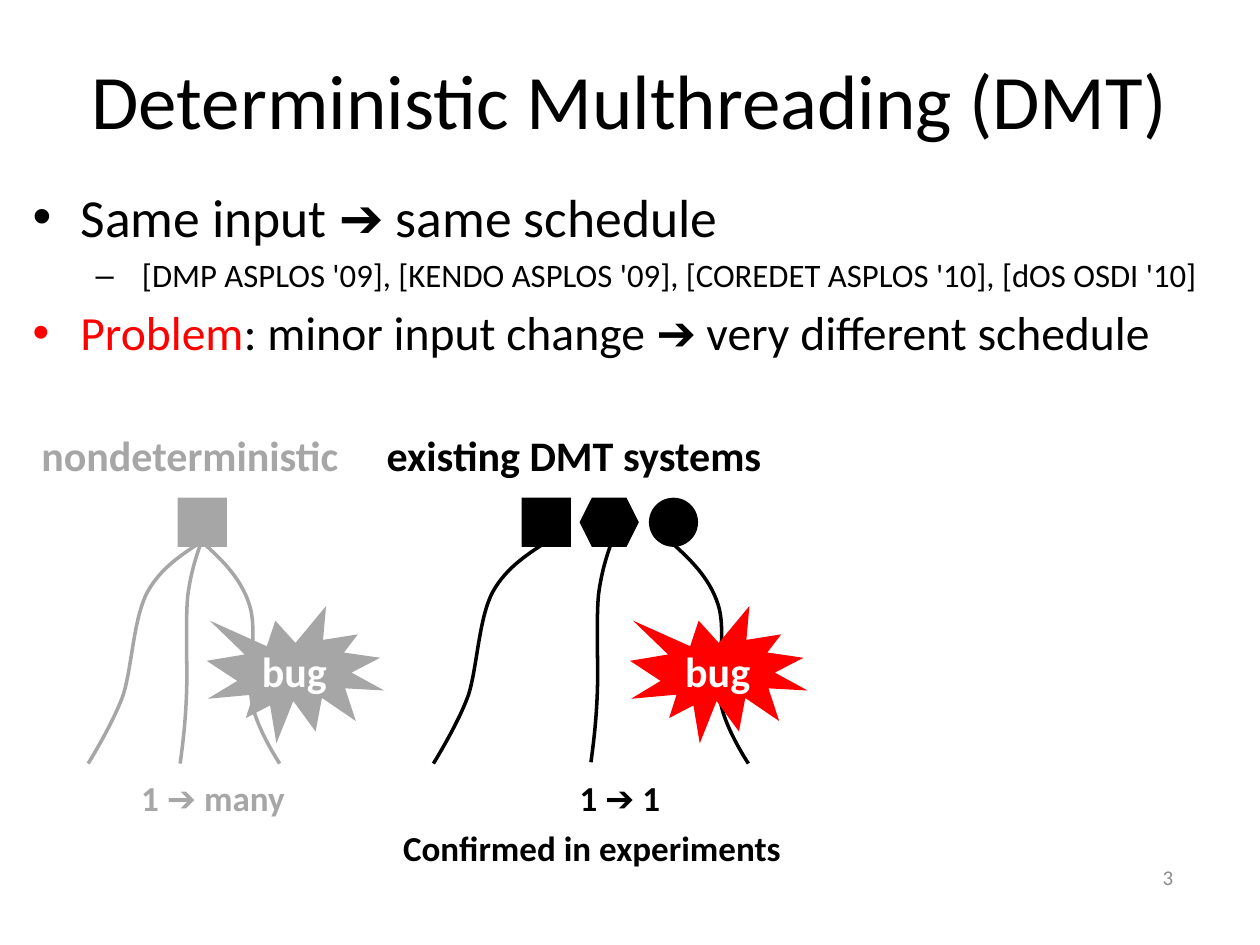
from pptx import Presentation
from pptx.dml.color import RGBColor
from pptx.enum.shapes import MSO_SHAPE
from pptx.enum.text import MSO_ANCHOR, PP_ALIGN
from pptx.oxml.ns import qn
from pptx.oxml.xmlchemy import OxmlElement
from pptx.util import Inches, Pt

RECT, HEXAGON, OVAL = MSO_SHAPE.RECTANGLE, MSO_SHAPE.HEXAGON, MSO_SHAPE.OVAL
BURST = MSO_SHAPE.EXPLOSION1
LEFT, CENTER, RIGHT = PP_ALIGN.LEFT, PP_ALIGN.CENTER, PP_ALIGN.RIGHT
TOP, MIDDLE = MSO_ANCHOR.TOP, MSO_ANCHOR.MIDDLE
COLORS = {"black": "000000", "red": "FF0000", "gray": "A6A6A6",
          "white": "FFFFFF", "number": "8C8C8C"}

deck = Presentation()
deck.slide_width, deck.slide_height = Inches(10), Inches(7.5)
page = deck.slides.add_slide(deck.slide_layouts[6])


def add_span(para, text, size, color, bold=False):
    span = para.add_run()
    span.text = text
    for name, value in {"name": "Calibri", "size": Pt(size), "bold": bold}.items():
        setattr(span.font, name, value)
    span.font.color.rgb = RGBColor.from_string(COLORS[color])


def add_box(shapes, bounds, text, size, color, align=LEFT, anchor=TOP, bold=True,
            wrap=True, shape=None, fill=None, outline=None):
    place = [Inches(value) for value in bounds]
    if shape is None:
        box = shapes.add_textbox(*place)
    else:
        box = shapes.add_shape(shape, *place)
        box.shadow.inherit = False
        if fill:
            box.fill.solid()
            box.fill.fore_color.rgb = RGBColor.from_string(COLORS[fill])
        else:
            box.fill.background()
        if outline:
            box.line.color.rgb = RGBColor.from_string(COLORS[outline])
            box.line.width = Pt(0.75)
        else:
            box.line.fill.background()
    frame = box.text_frame
    frame.word_wrap, frame.vertical_anchor = wrap, anchor
    if text:
        frame.paragraphs[0].alignment = align
        add_span(frame.paragraphs[0], text, size, color, bold)
    return box


add_box(page.shapes, (0.5, 0.16, 9, 1.25), "Deterministic Multhreading (DMT)", 44,
        "black", CENTER, MIDDLE, bold=False)

bullets = [
    ("•", 0.38, 0.38, 30.6, 6, [("Same input ➔ same schedule", "black")]),
    ("–", 0.81, 0.31, 18.7, 4,
     [(" [DMP ASPLOS '09], [KENDO ASPLOS '09], [COREDET ASPLOS '10], [dOS OSDI '10]",
       "black")]),
    ("•", 0.38, 0.38, 27.2, 5,
     [("Problem", "red"), (": minor input change ➔ very different schedule", "black")]),
]
body = add_box(page.shapes, (0.16, 1.41, 9.69, 2.03), "", 27.2, "black").text_frame
for index, (mark, margin, hanging, size, before, spans) in enumerate(bullets):
    para = body.add_paragraph() if index else body.paragraphs[0]
    para.space_before = Pt(before)
    properties = para._p.get_or_add_pPr()
    properties.set("marL", str(Inches(margin)))
    properties.set("indent", str(-Inches(hanging)))
    for tag, name, value in (("a:buFont", "typeface", "Arial"), ("a:buChar", "char", mark)):
        element = OxmlElement(tag)
        element.set(name, value)
        properties.append(element)
    for text, color in spans:
        add_span(para, text, size, color)

add_box(page.shapes, (7.08, 6.76, 2.33, 0.4), "3", 12, "number", RIGHT, MIDDLE, bold=False)

STRANDS = {
    "left": [(0, 0), (-0.17, 0.11), (-0.35, 0.22), (-0.46, 0.42),
             (-0.57, 0.63), (-0.58, 1), (-0.65, 1.23),
             (-0.73, 1.46), (-0.93, 1.78), (-0.93, 1.78)],
    "middle": [(0, 0), (-0.06, 0.16), (-0.12, 0.31), (-0.15, 0.54),
               (-0.17, 0.76), (-0.15, 1.12), (-0.16, 1.34),
               (-0.17, 1.57), (-0.19, 1.72), (-0.21, 1.87)],
    "right": [(0, 0), (0.17, 0.15), (0.33, 0.3), (0.4, 0.52),
              (0.47, 0.74), (0.38, 1.09), (0.42, 1.3),
              (0.46, 1.51), (0.64, 1.78), (0.64, 1.78)],
}
systems = [
    {"color": "black", "title": "existing DMT systems", "title_at": (2.97, 3.21),
     "inputs": [(RECT, 4.14, 0.39), (HEXAGON, 4.6, 0.47), (OVAL, 5.15, 0.39)],
     "strands": [("left", 4.37, 4.28), ("right", 5.3, 4.28), ("middle", 4.9, 4.18)],
     "bug": (5, "red"), "ratio": (4.06, "1 ➔ 1"), "shapes": page.shapes},
    {"color": "gray", "title": "nondeterministic", "title_at": (0.23, 2.58),
     "inputs": [(RECT, 1.41, 0.39)],
     "strands": [("left", 1.63, 4.28), ("right", 1.58, 4.28), ("middle", 1.64, 4.19)],
     "bug": (1.64, "gray"), "ratio": (0.83, "1 ➔ many"),
     "shapes": page.shapes.add_group_shape().shapes},
]
for system in systems:
    color, shapes = system["color"], system["shapes"]
    left, width = system["title_at"]
    add_box(shapes, (left, 3.36, width, 0.5), system["title"], 24, color, wrap=False)
    for shape, left, width in system["inputs"]:
        add_box(shapes, (left, 3.95, width, 0.39), "", 24, color, shape=shape, fill=color)
    for strand, start_x, start_y in system["strands"]:
        points = [(Inches(start_x + x), Inches(start_y + y)) for x, y in STRANDS[strand]]
        builder = shapes.build_freeform(*points[0])
        builder.add_line_segments(points[3::3], close=False)
        curve = builder.convert_to_shape()
        left, top = min(x for x, y in points[::3]), min(y for x, y in points[::3])
        segments = list(curve._element.iter(qn("a:lnTo")))
        for index, segment in enumerate(segments):
            bezier = OxmlElement("a:cubicBezTo")
            for x, y in points[3 * index + 1:3 * index + 4]:
                point = OxmlElement("a:pt")
                point.set("x", str(x - left))
                point.set("y", str(y - top))
                bezier.append(point)
            segment.getparent().replace(segment, bezier)
        curve.shadow.inherit = False
        curve.fill.background()
        curve.line.color.rgb = RGBColor.from_string(COLORS[color])
        curve.line.width = Pt(2)
    left, fill = system["bug"]
    add_box(shapes, (left, 4.81, 1.41, 1.09), "bug", 24, "white", CENTER, MIDDLE,
            wrap=False, shape=BURST, fill=fill)
    left, text = system["ratio"]
    add_box(shapes, (left, 6.11, 1.72, 0.44), text, 20, color, CENTER,
            shape=RECT, outline="white")

add_box(page.shapes, (2.97, 6.51, 3.52, 0.44), "Confirmed in experiments ", 20, "black",
        CENTER, shape=RECT, outline="white")

deck.save("out.pptx")
